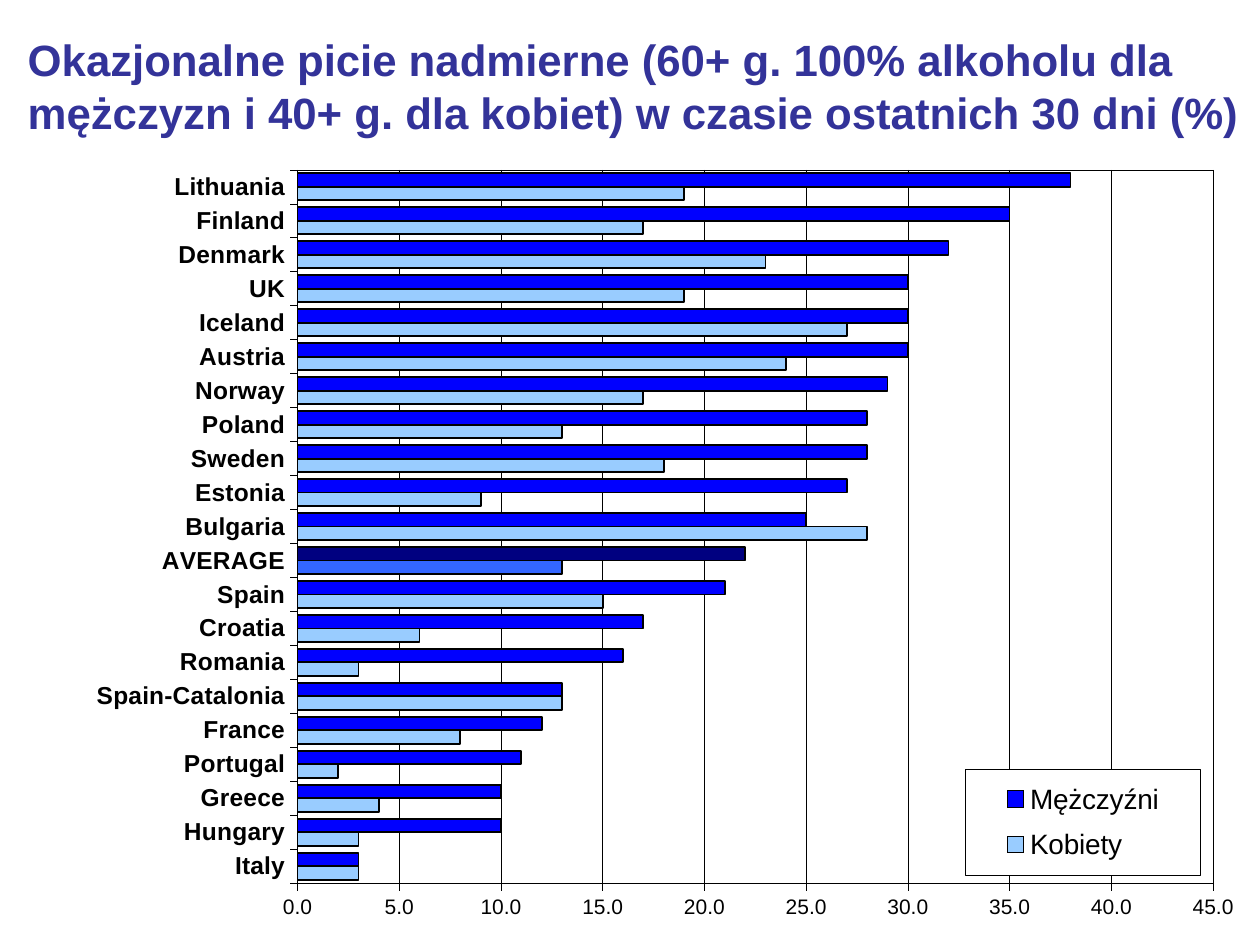
from dataclasses import dataclass

from lxml import etree
from pptx import Presentation
from pptx import util as u
from pptx.chart.data import CategoryChartData
from pptx.dml.color import RGBColor
from pptx.enum import chart as ch, text
from pptx.oxml import ns


@dataclass(frozen=True)
class Theme:
    font: str = "Arial"
    title: str = "333399"
    ink: str = "000000"
    paper: str = "FFFFFF"
    men: str = "0000FF"
    women: str = "99CCFF"
    men_average: str = "000080"
    women_average: str = "3366FF"
    title_size: float = 25
    legend_size: float = 16
    category_size: float = 14
    value_size: float = 12
    hairline: float = 0.25
    bar_line: float = 1.02


T = Theme()

RATES = [
    ("Italy", 3, 3),
    ("Hungary", 3, 10),
    ("Greece", 4, 10),
    ("Portugal", 2, 11),
    ("France", 8, 12),
    ("Spain-Catalonia", 13, 13),
    ("Romania", 3, 16),
    ("Croatia", 6, 17),
    ("Spain", 15, 21),
    ("AVERAGE", 13, 22),
    ("Bulgaria", 28, 25),
    ("Estonia", 9, 27),
    ("Sweden", 18, 28),
    ("Poland", 13, 28),
    ("Norway", 17, 29),
    ("Austria", 24, 30),
    ("Iceland", 27, 30),
    ("UK", 19, 30),
    ("Denmark", 23, 32),
    ("Finland", 17, 35),
    ("Lithuania", 19, 38),
]


def set_font(font, size, color=T.ink, bold=False):
    font.name = T.font
    font.size = u.Pt(size)
    font.bold = bold
    font.color.rgb = RGBColor.from_string(color)


def set_text(tf, words, align=text.PP_ALIGN.LEFT, **style):
    p = tf.paragraphs[0]
    p.alignment = align
    r = p.add_run()
    r.text = words
    set_font(r.font, **style)


def set_line(line, width=T.hairline):
    line.color.rgb = RGBColor.from_string(T.ink)
    line.width = u.Pt(width)


def set_fill(fill, color):
    fill.solid()
    fill.fore_color.rgb = RGBColor.from_string(color)


def chart_xml(inner):
    return etree.fromstring(f'<c:root {ns.nsdecls("c", "a")}>{inner}</c:root>')[0]


def manual_layout(*percents, inner=False):
    target = '<c:layoutTarget val="inner"/>' if inner else ""
    sizes = "".join(f'<c:{k} val="{v / 100:.3f}"/>' for k, v in zip("xywh", percents))
    return chart_xml(
        f'<c:layout><c:manualLayout>{target}<c:xMode val="edge"/>'
        f'<c:yMode val="edge"/>{sizes}</c:manualLayout></c:layout>')


def frame(fill):
    return chart_xml(
        f'<c:spPr>{fill}<a:ln w="{u.Pt(T.hairline)}"><a:solidFill>'
        f'<a:srgbClr val="{T.ink}"/></a:solidFill></a:ln></c:spPr>')


def add_title(s, words):
    sp = s.shapes.title
    sp.left, sp.top = u.Inches(0.12), u.Inches(0.21)
    sp.width, sp.height = u.Inches(9.88), u.Inches(0.94)
    tf = sp.text_frame
    tf.word_wrap = True
    tf.auto_size = text.MSO_AUTO_SIZE.NONE
    tf.vertical_anchor = text.MSO_ANCHOR.MIDDLE
    set_text(tf, words, size=T.title_size, color=T.title, bold=True)


def format_axis(axis, size, bold=False):
    axis.major_tick_mark = ch.XL_TICK_MARK.OUTSIDE
    axis.minor_tick_mark = ch.XL_TICK_MARK.NONE
    set_font(axis.tick_labels.font, size, bold=bold)
    set_line(axis.format.line)


def format_series(series, color, average_color):
    series.invert_if_negative = False
    average = [name for name, *_ in RATES].index("AVERAGE")
    for part, shade in ((series, color), (series.points[average], average_color)):
        set_fill(part.format.fill, shade)
        set_line(part.format.line, T.bar_line)


def format_legend(chart):
    chart.has_legend = True
    legend = chart.legend
    legend.position = ch.XL_LEGEND_POSITION.RIGHT
    legend.include_in_layout = False
    set_font(legend.font, T.legend_size)
    root = chart.element.find(".//" + ns.qn("c:legend"))
    for old in root.findall(ns.qn("c:layout")):
        root.remove(old)
    root.find(ns.qn("c:legendPos")).addnext(manual_layout(76.3, 78.5, 19.1, 13.5))
    root.find(ns.qn("c:overlay")).addnext(
        frame(f'<a:solidFill><a:srgbClr val="{T.paper}"/></a:solidFill>'))


def format_plot_area(chart):
    area = chart.element.find(".//" + ns.qn("c:plotArea"))
    for old in area.findall(ns.qn("c:layout")):
        area.remove(old)
    area.insert(0, manual_layout(22.1, 1.9, 74.3, 91.2, inner=True))
    area.append(frame("<a:noFill/>"))


def add_rates_chart(s):
    countries, women, men = zip(*RATES)
    data = CategoryChartData(number_format="0.0")
    data.categories = countries
    data.add_series("Kobiety", women)
    data.add_series("Mężczyźni", men)
    chart = s.shapes.add_chart(
        ch.XL_CHART_TYPE.BAR_CLUSTERED, u.Inches(0.2), u.Inches(1.23),
        u.Inches(9.78), u.Inches(6.21), data).chart
    chart.has_title = False
    set_font(chart.font, T.value_size)

    plot = chart.plots[0]
    plot.gap_width, plot.overlap = 50, 0
    plot.vary_by_categories = False
    format_series(plot.series[0], T.women, T.women_average)
    format_series(plot.series[1], T.men, T.men_average)

    format_axis(chart.category_axis, T.category_size, bold=True)
    axis = chart.value_axis
    format_axis(axis, T.value_size)
    axis.minimum_scale, axis.maximum_scale, axis.major_unit = 0, 45, 5
    axis.tick_labels.number_format = "0.0"
    axis.tick_labels.number_format_is_linked = False
    axis.has_major_gridlines = True
    set_line(axis.major_gridlines.format.line)
    format_legend(chart)
    format_plot_area(chart)


def main():
    prs = Presentation()
    prs.slide_width, prs.slide_height = u.Inches(10), u.Inches(7.5)
    s = prs.slides.add_slide(prs.slide_layouts[5])
    add_title(s, "Okazjonalne picie nadmierne (60+ g. 100% alkoholu dla mężczyzn "
                 "i 40+ g. dla kobiet) w czasie ostatnich 30 dni (%)")
    add_rates_chart(s)
    prs.save("out.pptx")


if __name__ == "__main__":
    main()
